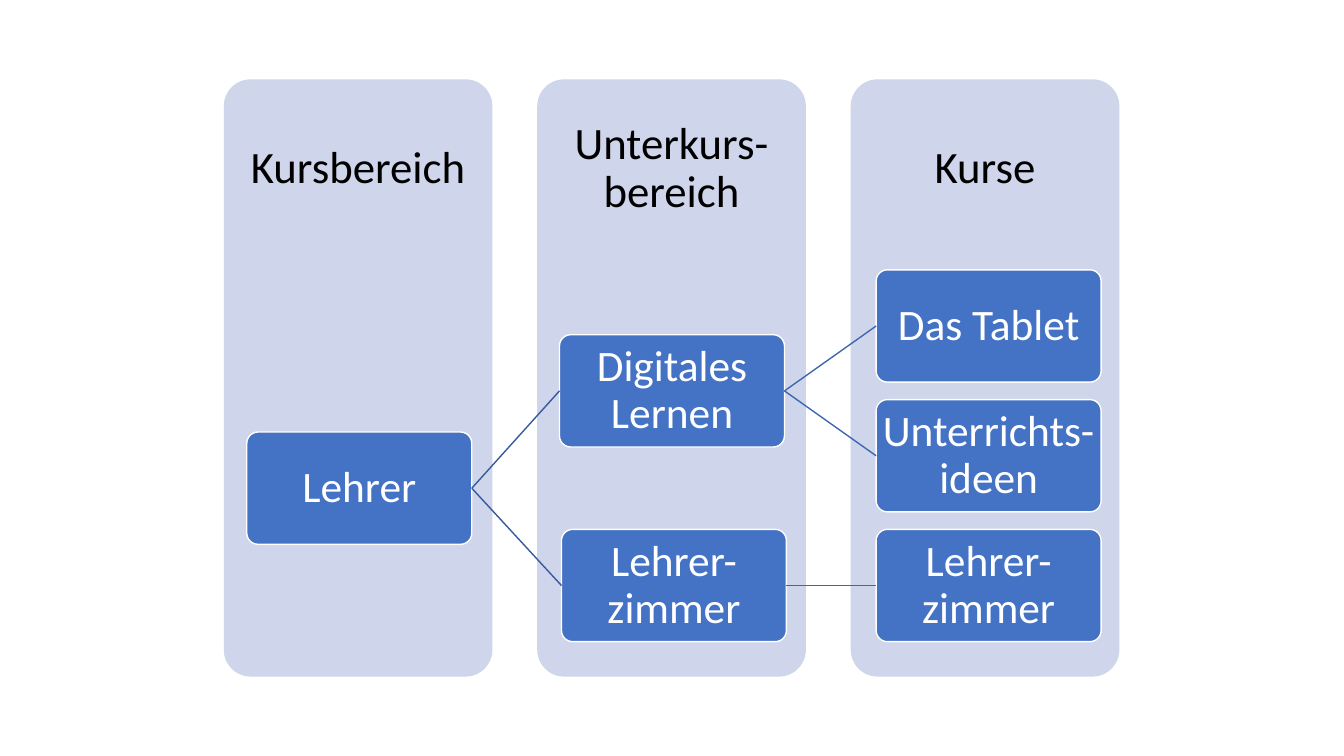
from lxml.etree import SubElement
from pptx import Presentation
from pptx.dml.color import RGBColor
from pptx.enum.shapes import MSO_CONNECTOR, MSO_SHAPE
from pptx.enum.text import MSO_ANCHOR, PP_ALIGN
from pptx.oxml.ns import qn
from pptx.util import Cm, Pt

PANEL_FILL = RGBColor(0xCF, 0xD5, 0xEA)
NODE_FILL = RGBColor(0x44, 0x72, 0xC4)
LINK_DARK = RGBColor(0x36, 0x5B, 0x9D)
LINK_LIGHT = RGBColor(0x3E, 0x67, 0xB2)
WHITE = RGBColor(0xFF, 0xFF, 0xFF)
BLACK = RGBColor(0x00, 0x00, 0x00)

HEADINGS = ["Kursbereich", "Unterkurs-bereich", "Kurse"]
# key: (text, left in cm, row; a parent sits halfway between its children)
NODES = {
    "teacher": ("Lehrer", 6.22, 1.25),
    "digital": ("Digitales Lernen", 14.1, 0.5),
    "staff area": ("Lehrer-zimmer", 14.15, 2),
    "tablet": ("Das Tablet", 22.08, 0),
    "ideas": ("Unterrichts-ideen", 22.08, 1),
    "staff course": ("Lehrer-zimmer", 22.08, 2),
}
LINKS = [
    ("teacher", "digital", LINK_DARK),
    ("teacher", "staff area", LINK_DARK),
    ("digital", "tablet", LINK_LIGHT),
    ("digital", "ideas", LINK_LIGHT),
    ("staff area", "staff course", LINK_LIGHT),
]

PANEL_LEFT, PANEL_TOP, PANEL_PITCH = 5.64, 2.0, 7.9
PANEL_WIDTH, PANEL_HEIGHT, HEADING_HEIGHT = 6.77, 15.05, 4.52
NODE_WIDTH, NODE_HEIGHT = 5.67, 2.83
ROW_TOP, ROW_PITCH = 6.8, 3.27
RIGHT_SITE, LEFT_SITE = 3, 1


def write_text(shape, text, size, color, inset):
    frame = shape.text_frame
    frame.word_wrap = True
    frame.vertical_anchor = MSO_ANCHOR.MIDDLE
    frame.margin_left = frame.margin_right = Cm(inset)
    frame.margin_top = frame.margin_bottom = Cm(inset)
    paragraph = frame.paragraphs[0]
    paragraph.alignment = PP_ALIGN.CENTER
    paragraph.line_spacing = 0.9
    run = paragraph.add_run()
    run.text = text
    run.font.name = "Calibri"
    run.font.size = Pt(size)
    run.font.color.rgb = color


def add_rounded(slide, left, top, width, height, fill):
    shape = slide.shapes.add_shape(
        MSO_SHAPE.ROUNDED_RECTANGLE, Cm(left), Cm(top), Cm(width), Cm(height))
    shape.adjustments[0] = 0.1
    shape.shadow.inherit = False
    shape.fill.solid()
    shape.fill.fore_color.rgb = fill
    return shape


def add_panel(slide, column, heading):
    left = PANEL_LEFT + column * PANEL_PITCH
    panel = add_rounded(slide, left, PANEL_TOP, PANEL_WIDTH, PANEL_HEIGHT, PANEL_FILL)
    panel.line.fill.background()
    box = slide.shapes.add_textbox(
        Cm(left), Cm(PANEL_TOP), Cm(PANEL_WIDTH), Cm(HEADING_HEIGHT))
    write_text(box, heading, 32, BLACK, 0.63)


def add_node(slide, text, left, row):
    top = ROW_TOP + row * ROW_PITCH
    node = add_rounded(slide, left, top, NODE_WIDTH, NODE_HEIGHT, NODE_FILL)
    node.line.color.rgb = WHITE
    node.line.width = Pt(1)
    write_text(node, text, 31, WHITE, 0.05)
    return node


def add_link(slide, parent, child, color):
    link = slide.shapes.add_connector(MSO_CONNECTOR.STRAIGHT, 0, 0, 0, 0)
    link.begin_connect(parent, RIGHT_SITE)
    link.end_connect(child, LEFT_SITE)
    link.line.color.rgb = color
    link.line.width = Pt(1)
    SubElement(link._element.spPr, qn("a:effectLst"))


def main():
    presentation = Presentation()
    presentation.slide_width = Cm(33.87)
    presentation.slide_height = Cm(19.05)
    slide = presentation.slides.add_slide(presentation.slide_layouts[6])

    for column, heading in enumerate(HEADINGS):
        add_panel(slide, column, heading)
    nodes = {key: add_node(slide, *node) for key, node in NODES.items()}
    for parent, child, color in LINKS:
        add_link(slide, nodes[parent], nodes[child], color)

    presentation.save("out.pptx")


if __name__ == "__main__":
    main()
